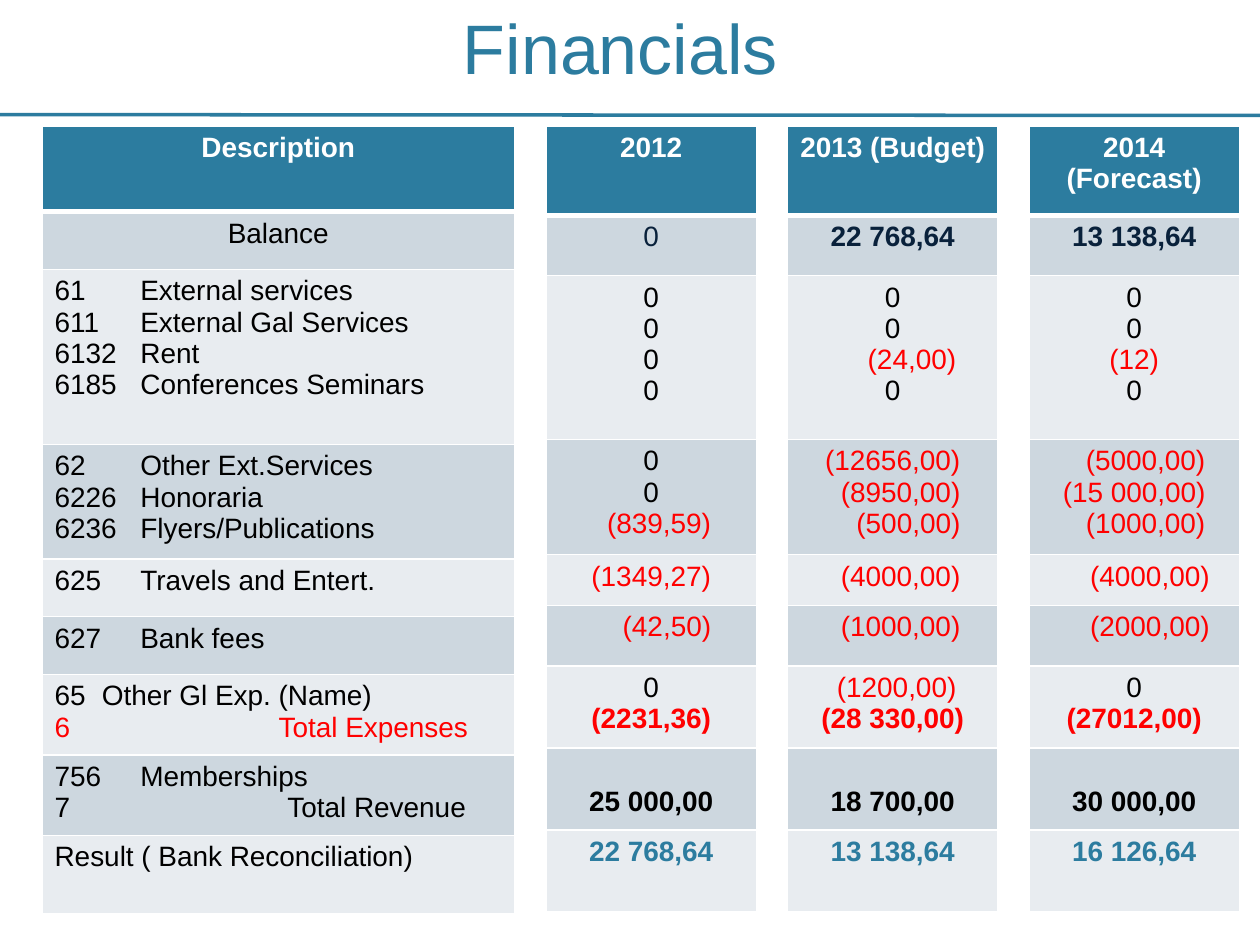
from dataclasses import dataclass

from lxml.etree import SubElement
from pptx import Presentation
from pptx.dml.color import RGBColor
from pptx.enum.shapes import MSO_CONNECTOR
from pptx.enum.text import MSO_ANCHOR, MSO_AUTO_SIZE, PP_ALIGN
from pptx.oxml.ns import qn
from pptx.util import Pt


@dataclass(frozen=True)
class Theme:
    font: str = "Arial"
    title_size: int = 40
    text_size: int = 16
    blue: str = "2C7C9F"
    navy: str = "09213B"
    black: str = "000000"
    red: str = "FF0000"
    white: str = "FFFFFF"
    dark_band: str = "CDD7DF"
    light_band: str = "E8ECF0"


THEME = Theme()


@dataclass(frozen=True)
class Line:
    """One paragraph of a cell; lengths are in points."""
    text: str
    color: str = THEME.black
    bold: bool = False
    centered: bool = False
    indent: float = 0
    tab: float = 0
    number: int = 0


# Table geometry in points
TABLE_TOP = 72
DESCRIPTION_LEFT, DESCRIPTION_WIDTH = 24, 270
YEAR_LEFT, YEAR_STEP, YEAR_WIDTH = 312, 138, 120.24
DESCRIPTION_HEIGHTS = [49, 33, 100, 65.5, 33, 33, 46, 46, 44.5]
YEAR_HEIGHTS = [51, 34.5, 93.6, 65.9, 29, 34.6, 46.8, 46.8, 46.8]
NAME_TAB = 49
REVENUE_ROW, REVENUE_TOP = 7, 22


def account(code, name, tab=NAME_TAB, color=THEME.black):
    return Line(f"{code}\t{name}", color, tab=tab)


def amount(text, indent=0, bold=False, color=None):
    """Centred figure; bracketed figures are costs and show in red."""
    color = color or (THEME.red if text.startswith("(") else THEME.black)
    return Line(text, color, bold, True, indent)


def header(text):
    return Line(text, THEME.white, True, True)


def balance(text, bold=True):
    return amount(text, bold=bold, color=THEME.navy)


def result(text):
    return amount(text, bold=True, color=THEME.blue)


ZERO = amount("0")

DESCRIPTION = [
    [header("Description")],
    [Line("Balance", centered=True)],
    [account("61", "External services"), account("611", "External Gal Services"),
     account("6132", "Rent"), account("6185", "Conferences Seminars")],
    [account("62", "Other Ext.Services"), account("6226", "Honoraria"),
     account("6236", "Flyers/Publications")],
    [account("625", "Travels and Entert.")],
    [account("627", "Bank fees")],
    [Line("Other Gl Exp. (Name)", indent=27, number=65),
     account("6", "Total Expenses", 128, THEME.red)],
    [Line("Memberships", indent=NAME_TAB, number=756),
     account("7", "Total Revenue", 133)],
    [Line("Result ( Bank Reconciliation)")],
]

YEARS = [
    [[header("2012")],
     [balance("0", bold=False)],
     [ZERO] * 4,
     [ZERO, ZERO, amount("(839,59)", 9)],
     [amount("(1349,27)")],
     [amount("(42,50)", 18)],
     [ZERO, amount("(2231,36)", bold=True)],
     [amount("25 000,00", bold=True)],
     [result("22 768,64")]],
    [[header("2013 (Budget)")],
     [balance("22 768,64")],
     [ZERO, ZERO, amount("(24,00)", 22), ZERO],
     [amount("(12656,00)"), amount("(8950,00)", 9), amount("(500,00)", 18)],
     [amount("(4000,00)", 9)],
     [amount("(1000,00)", 9)],
     [amount("(1200,00)", 4.5), amount("(28 330,00)", bold=True)],
     [amount("18 700,00", bold=True)],
     [result("13 138,64")]],
    [[header("2014 (Forecast)")],
     [balance("13 138,64")],
     [ZERO, ZERO, amount("(12)"), ZERO],
     [amount("(5000,00)", 13), amount("(15 000,00)"), amount("(1000,00)", 13)],
     [amount("(4000,00)", 18)],
     [amount("(2000,00)", 18)],
     [ZERO, amount("(27012,00)", bold=True)],
     [amount("30 000,00", bold=True)],
     [result("16 126,64")]],
]


def add_span(para, text, size, color, bold=False):
    span = para.add_run()
    span.text = text
    span.font.name = THEME.font
    span.font.size = Pt(size)
    span.font.bold = bold
    span.font.color.rgb = RGBColor.from_string(color)


def add_title(page, text):
    title = page.shapes.title
    title.left, title.top, title.width, title.height = Pt(43.2), Pt(8.6), Pt(633.6), Pt(45.4)
    frame = title.text_frame
    frame.auto_size = MSO_AUTO_SIZE.NONE
    frame.vertical_anchor = MSO_ANCHOR.BOTTOM
    para = frame.paragraphs[0]
    para.alignment = PP_ALIGN.CENTER
    add_span(para, text, THEME.title_size, THEME.blue)


def add_rule(page):
    rule = page.shapes.add_connector(MSO_CONNECTOR.STRAIGHT, Pt(0), Pt(65.5), Pt(720), Pt(66))
    rule.line.width = Pt(2)
    rule.line.color.rgb = RGBColor.from_string(THEME.blue)
    SubElement(rule._element.spPr, qn("a:effectLst"))


def format_para(para, line):
    para.alignment = PP_ALIGN.CENTER if line.centered else PP_ALIGN.LEFT
    properties = para._p.get_or_add_pPr()
    if line.indent:
        properties.set("marL", str(Pt(line.indent)))
    if line.number:
        properties.set("indent", str(-Pt(line.indent)))
        SubElement(properties, qn("a:buFont"), typeface=THEME.font)
        SubElement(properties, qn("a:buAutoNum"), type="arabicPlain", startAt=str(line.number))
    if line.tab:
        stops = SubElement(properties, qn("a:tabLst"))
        SubElement(stops, qn("a:tab"), pos=str(Pt(line.tab)), algn="l")


def set_borders(cell, bottom_width):
    properties = cell._tc.get_or_add_tcPr()
    for side, width in (("L", 1), ("R", 1), ("T", 1), ("B", bottom_width)):
        border = SubElement(properties, qn(f"a:ln{side}"), w=str(Pt(width)))
        fill = SubElement(border, qn("a:solidFill"))
        SubElement(fill, qn("a:srgbClr"), val=THEME.white)


def fill_cell(cell, lines, row):
    # Borders come before the fill in the cell properties
    set_borders(cell, 1 if row else 3)
    band = THEME.dark_band if row % 2 else THEME.light_band
    cell.fill.solid()
    cell.fill.fore_color.rgb = RGBColor.from_string(band if row else THEME.blue)
    frame = cell.text_frame
    for index, line in enumerate(lines):
        para = frame.add_paragraph() if index else frame.paragraphs[0]
        format_para(para, line)
        add_span(para, line.text, THEME.text_size, line.color, line.bold)


def add_column_table(page, left, width, heights, cells):
    frame = page.shapes.add_table(len(cells), 1, Pt(left), Pt(TABLE_TOP), Pt(width), Pt(sum(heights)))
    table = frame.table
    for row, (height, lines) in enumerate(zip(heights, cells)):
        table.rows[row].height = Pt(height)
        fill_cell(table.cell(row, 0), lines, row)
    return table


def main():
    deck = Presentation()
    deck.slide_width, deck.slide_height = Pt(720), Pt(540)
    page = deck.slides.add_slide(deck.slide_layouts[5])

    # Heading
    add_rule(page)
    add_title(page, "Financials ")

    # Account descriptions, then one table for each year
    add_column_table(page, DESCRIPTION_LEFT, DESCRIPTION_WIDTH, DESCRIPTION_HEIGHTS, DESCRIPTION)
    for index, cells in enumerate(YEARS):
        left = YEAR_LEFT + index * YEAR_STEP
        table = add_column_table(page, left, YEAR_WIDTH, YEAR_HEIGHTS, cells)
        # Total revenue lines up with the second line of its description
        table.cell(REVENUE_ROW, 0).margin_top = Pt(REVENUE_TOP)

    deck.save("out.pptx")


if __name__ == "__main__":
    main()
